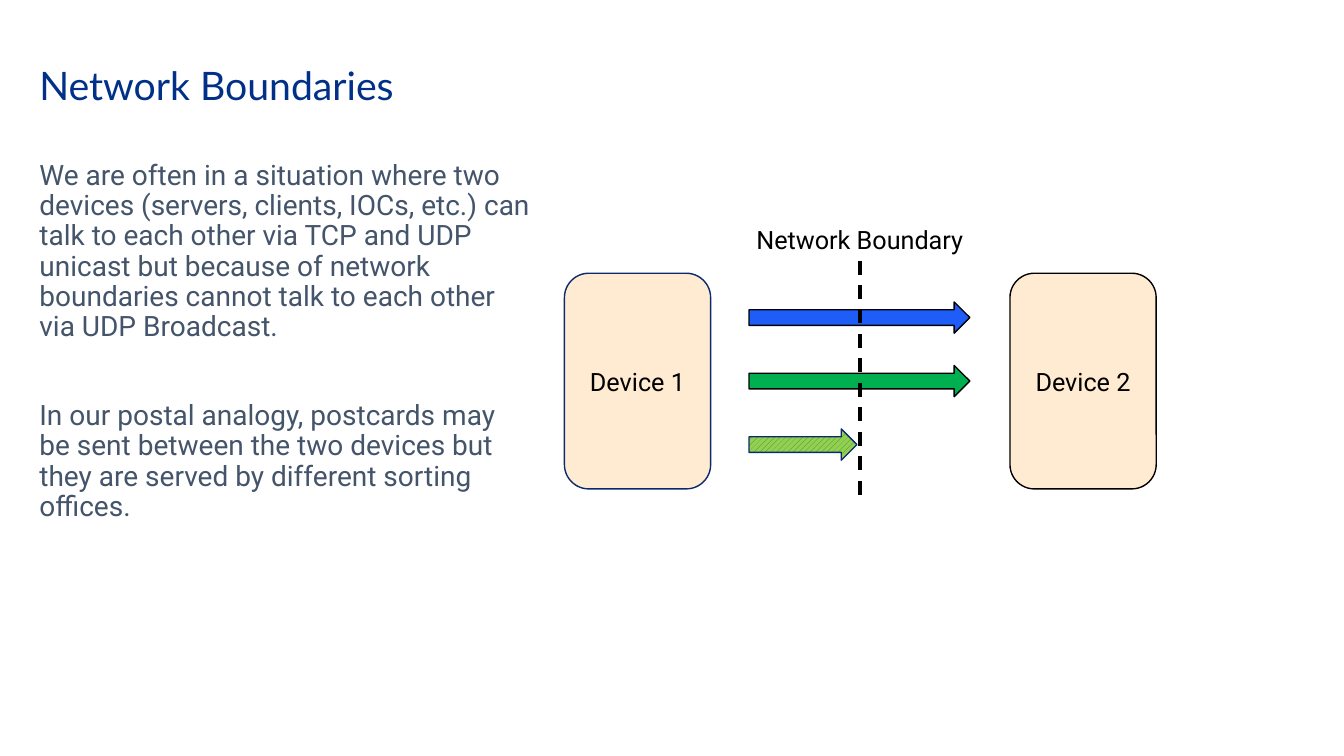
from dataclasses import dataclass

from lxml import etree
from pptx import Presentation
from pptx.dml.color import RGBColor
from pptx.enum.dml import MSO_LINE, MSO_PATTERN
from pptx.enum.shapes import MSO_CONNECTOR, MSO_SHAPE
from pptx.enum.text import MSO_ANCHOR, MSO_AUTO_SIZE, PP_ALIGN
from pptx.oxml.ns import qn
from pptx.util import Inches, Pt

LEFT, CENTER = PP_ALIGN.LEFT, PP_ALIGN.CENTER
TOP, MIDDLE = MSO_ANCHOR.TOP, MSO_ANCHOR.MIDDLE
ROUNDED, ARROW = MSO_SHAPE.ROUNDED_RECTANGLE, MSO_SHAPE.RIGHT_ARROW
STRAIGHT, DASH = MSO_CONNECTOR.STRAIGHT, MSO_LINE.DASH
HATCH = MSO_PATTERN.WIDE_UPWARD_DIAGONAL
FIXED, GROW = MSO_AUTO_SIZE.NONE, MSO_AUTO_SIZE.SHAPE_TO_FIT_TEXT
BOTTOM_SIDE = 2

# The slide is a grid of 100 columns by 100 rows
SLIDE_W, SLIDE_H = 13.33, 7.5
GRID = 100


@dataclass(frozen=True)
class Theme:
    heading_font: str = "Lato"
    text_font: str = "Roboto"
    title_size: int = 28
    body_size: int = 20
    label_size: int = 18
    title: str = "003088"
    body: str = "44546A"
    ink: str = "000000"
    navy: str = "0D296D"
    device: str = "FFEBD1"
    blue: str = "1E5DF8"
    green: str = "00B050"
    hatch_line: str = "3E863E"
    hatch_ground: str = "92D050"
    outline: float = 1
    boundary: float = 2.5


@dataclass(frozen=True)
class Box:
    x: float
    y: float
    w: float
    h: float

    def inner(self, x, y, w, h):
        return Box(self.x + x, self.y + y, w, h)

    def lengths(self):
        col, row = SLIDE_W / GRID, SLIDE_H / GRID
        return [Inches(n) for n in (self.x * col, self.y * row, self.w * col, self.h * row)]


THEME = Theme()


def rgb(value):
    return RGBColor.from_string(value)


def write(holder, *paragraphs, size, color, font=THEME.text_font, align=LEFT,
          anchor=TOP, spacing=1.0, gap=0, fit=FIXED):
    frame = holder.text_frame
    frame.word_wrap = True
    frame.auto_size = fit
    frame.vertical_anchor = anchor
    for i, text in enumerate(paragraphs):
        paragraph = frame.add_paragraph() if i else frame.paragraphs[0]
        properties = paragraph._p.get_or_add_pPr()
        properties.set("marL", "0")
        properties.set("indent", "0")
        etree.SubElement(properties, qn("a:buNone"))
        paragraph.alignment = align
        paragraph.line_spacing = spacing
        paragraph.space_before = Pt(gap if i else 0)
        run = paragraph.add_run()
        run.text = text
        run.font.name = font
        run.font.size = Pt(size)
        run.font.color.rgb = rgb(color)


def place(holder, box):
    holder.left, holder.top, holder.width, holder.height = box.lengths()


def add_outlined(slide, kind, box, fill, line):
    shape = slide.shapes.add_shape(kind, *box.lengths())
    shape.shadow.inherit = False
    if isinstance(fill, tuple):
        shape.fill.patterned()
        shape.fill.pattern = HATCH
        shape.fill.fore_color.rgb, shape.fill.back_color.rgb = map(rgb, fill)
    else:
        shape.fill.solid()
        shape.fill.fore_color.rgb = rgb(fill)
    shape.line.color.rgb = rgb(line)
    shape.line.width = Pt(THEME.outline)
    return shape


def add_explanation(slide, box):
    title, body = slide.shapes.title, slide.placeholders[1]
    place(title, box.inner(0, 0, box.w, 12.67))
    write(title, "Network Boundaries", size=THEME.title_size, color=THEME.title,
          font=THEME.heading_font, anchor=MIDDLE, spacing=0.9)
    place(body, box.inner(0, 15.33, box.w, box.h - 15.33))
    write(body,
          "We are often in a situation where two devices (servers, clients, IOCs, etc.) "
          "can talk to each other via TCP and UDP unicast but because of network "
          "boundaries cannot talk to each other via UDP Broadcast.",
          "In our postal analogy, postcards may be sent between the two devices but "
          "they are served by different sorting offices.",
          size=THEME.body_size, color=THEME.body, spacing=0.9, gap=42)


def add_diagram(slide, box):
    device_w, device_h, device_top = 10.88, 28.53, 7.07
    arrow_left, arrow_w, arrow_h, arrow_pitch = 13.73, 16.43, 4.13, 8.4

    # Devices at both ends
    devices = (("Device 1", 0, THEME.navy),
               ("Device 2", box.w - device_w, THEME.ink))
    for name, left, line in devices:
        device = add_outlined(slide, ROUNDED, box.inner(left, device_top, device_w, device_h),
                              THEME.device, line)
        write(device, name, size=THEME.label_size, color=THEME.ink,
              align=CENTER, anchor=MIDDLE)

    # Messages, centred on the devices; the last stops at the boundary
    middle = device_top + device_h / 2 - arrow_h / 2
    messages = ((THEME.blue, THEME.ink, arrow_w),
                (THEME.green, THEME.ink, arrow_w),
                ((THEME.hatch_line, THEME.hatch_ground), THEME.navy, 8.03))
    for i, (fill, line, width) in enumerate(messages):
        top = middle + (i - 1) * arrow_pitch
        add_outlined(slide, ARROW, box.inner(arrow_left, top, width, arrow_h), fill, line)

    # Boundary label and the dashed line below it
    label_w, label_h = 21, 5.4
    label_box = box.inner((box.w - label_w) / 2 - 0.04, 0, label_w, label_h)
    label = slide.shapes.add_textbox(*label_box.lengths())
    write(label, "Network Boundary", size=THEME.label_size, color=THEME.ink,
          align=CENTER, fit=GROW)
    x, y, _, h = label_box.inner(label_w / 2, label_h, 0, box.h - label_h).lengths()
    boundary = slide.shapes.add_connector(STRAIGHT, x, y, x, y + h)
    boundary.begin_connect(label, BOTTOM_SIDE)
    boundary.line.color.rgb = rgb(THEME.ink)
    boundary.line.width = Pt(THEME.boundary)
    boundary.line.dash_style = DASH
    etree.SubElement(boundary._element.spPr, qn("a:effectLst"))


def main():
    deck = Presentation()
    deck.slide_width, deck.slide_height = Inches(SLIDE_W), Inches(SLIDE_H)
    slide = deck.slides.add_slide(deck.slide_layouts[1])
    add_explanation(slide, Box(2.18, 5.33, 38.03, 70.13))
    add_diagram(slide, Box(42, 29.07, 44.03, 36.4))
    deck.save("out.pptx")


if __name__ == "__main__":
    main()
